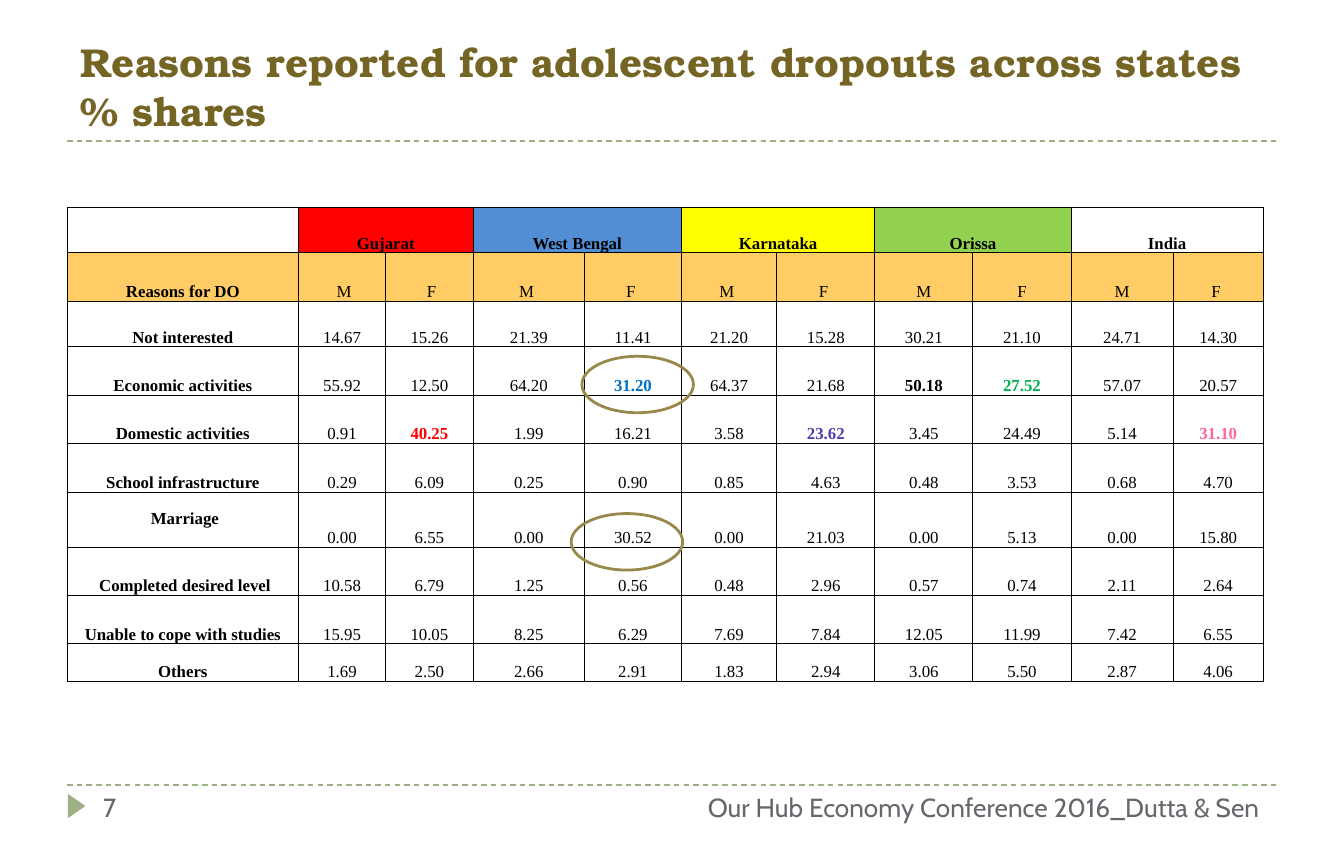
import dataclasses

import lxml.etree
import pptx
import pptx.dml.color
import pptx.enum.dml
import pptx.enum.shapes
import pptx.enum.text
import pptx.oxml.ns
import pptx.util

Inches = pptx.util.Inches
Pt = pptx.util.Pt
Align = pptx.enum.text.PP_ALIGN
Anchor = pptx.enum.text.MSO_ANCHOR
Shape = pptx.enum.shapes.MSO_SHAPE
qn = pptx.oxml.ns.qn


@dataclasses.dataclass(frozen=True)
class Theme:
    title: str = "756525"
    rule: str = "9CB084"
    ring: str = "98894B"
    foot: str = "69676D"
    ink: str = "000000"
    paper: str = "FFFFFF"
    band: str = "FFCC66"
    title_font: str = "TeX Gyre Bonum"
    table_font: str = "Times New Roman"
    foot_font: str = "Cabin"
    title_size: float = 21.6
    table_size: float = 9
    foot_size: float = 14


STATES = [("Gujarat", "FF0000"), ("West Bengal", "538ED5"), ("Karnataka", "FFFF00"),
          ("Orissa", "92D050"), ("India", Theme.paper)]
SEXES = ["Reasons for DO", " M", " F", "M ", "F ", "M ", "F ", "M", "F", "M", "F "]
REASONS = [
    ("Not interested", "14.67 15.26 21.39 11.41 21.20 15.28 30.21 21.10 24.71 14.30"),
    ("Economic activities", "55.92 12.50 64.20 31.20 64.37 21.68 50.18 27.52 57.07 20.57"),
    ("Domestic activities", "0.91 40.25 1.99 16.21 3.58 23.62 3.45 24.49 5.14 31.10"),
    ("School infrastructure", "0.29 6.09 0.25 0.90 0.85 4.63 0.48 3.53 0.68 4.70"),
    (" Marriage", "0.00 6.55 0.00 30.52 0.00 21.03 0.00 5.13 0.00 15.80"),
    (" Completed desired level", "10.58 6.79 1.25 0.56 0.48 2.96 0.57 0.74 2.11 2.64"),
    ("Unable to cope with studies", "15.95 10.05 8.25 6.29 7.69 7.84 12.05 11.99 7.42 6.55"),
    ("Others", "1.69 2.50 2.66 2.91 1.83 2.94 3.06 5.50 2.87 4.06"),
]
# Bold figures by (row, column) of the table
MARKS = {(3, 4): "0070C0", (3, 7): Theme.ink, (3, 8): "00B050",
         (4, 2): "FF0000", (4, 6): "533EA9", (4, 10): "FF6699"}
COLS = [1.72, 0.65, 0.65, 0.83, 0.72, 0.71, 0.73, 0.73, 0.73, 0.76, 0.67]
ROWS = [0.34, 0.36, 0.34, 0.36, 0.36, 0.36, 0.41, 0.36, 0.36, 0.28]


def tint(code):
    return pptx.dml.color.RGBColor.from_string(code)


def write(frame, text, font, size, color, bold=False, align=Align.LEFT):
    para = frame.paragraphs[0]
    para.alignment = align
    run = para.add_run()
    run.text = text
    run.font.name = font
    run.font.size = Pt(size)
    run.font.bold = bold
    run.font.color.rgb = tint(color)


def edge(cell, color, width):
    """Draw all four borders; call before the cell is filled."""
    props = cell._tc.get_or_add_tcPr()
    for side in ("a:lnL", "a:lnR", "a:lnT", "a:lnB"):
        line = lxml.etree.SubElement(props, qn(side), w=str(Pt(width)))
        fill = lxml.etree.SubElement(line, qn("a:solidFill"))
        lxml.etree.SubElement(fill, qn("a:srgbClr"), val=color)


class Board:
    """Holds the theme and the slide being built."""

    def __init__(self, slide, theme):
        self.slide = slide
        self.theme = theme

    def title(self, text, left, top, width, height):
        box = self.slide.shapes.title
        box.left, box.top = Inches(left), Inches(top)
        box.width, box.height = Inches(width), Inches(height)
        frame = box.text_frame
        frame.word_wrap = True
        frame.auto_size = pptx.enum.text.MSO_AUTO_SIZE.NONE
        frame.vertical_anchor = Anchor.BOTTOM
        write(frame, text, self.theme.title_font, self.theme.title_size,
              self.theme.title, bold=True)

    def rule(self, left, right, top):
        line = self.slide.shapes.add_connector(
            pptx.enum.shapes.MSO_CONNECTOR.STRAIGHT,
            Inches(left), Inches(top), Inches(right), Inches(top))
        line.line.color.rgb = tint(self.theme.rule)
        line.line.width = Pt(0.75)
        line.line.dash_style = pptx.enum.dml.MSO_LINE.DASH
        lxml.etree.SubElement(line._element.spPr, qn("a:effectLst"))

    def arrow(self, left, top, width, height):
        mark = self.slide.shapes.add_shape(
            Shape.ISOSCELES_TRIANGLE, Inches(left), Inches(top), Inches(width), Inches(height))
        mark.rotation = 90
        mark.shadow.inherit = False
        mark.fill.solid()
        mark.fill.fore_color.rgb = tint(self.theme.rule)
        mark.line.fill.background()

    def ring(self, left, top):
        oval = self.slide.shapes.add_shape(
            Shape.OVAL, Inches(left), Inches(top), Inches(0.83), Inches(0.42))
        oval.shadow.inherit = False
        oval.fill.background()
        oval.line.color.rgb = tint(self.theme.ring)
        oval.line.width = Pt(1.5)

    def foot(self, text, left, width, align=Align.LEFT):
        box = self.slide.shapes.add_textbox(
            Inches(left), Inches(5.84), Inches(width), Inches(0.34))
        box.text_frame.word_wrap = True
        write(box.text_frame, text, self.theme.foot_font, self.theme.foot_size,
              self.theme.foot, align=align)

    def cell(self, cell, text, fill, color, bold):
        cell.margin_left = cell.margin_right = cell.margin_top = Inches(0.01)
        cell.margin_bottom = 0
        cell.vertical_anchor = Anchor.BOTTOM
        edge(cell, self.theme.ink, 0.5)
        cell.fill.solid()
        cell.fill.fore_color.rgb = tint(fill)
        if text:
            write(cell.text_frame, text, self.theme.table_font, self.theme.table_size,
                  color, bold=bold, align=Align.CENTER)

    def table(self, left, top):
        theme = self.theme
        grid = self.slide.shapes.add_table(
            len(ROWS), len(COLS), Inches(left), Inches(top),
            Inches(sum(COLS)), Inches(sum(ROWS))).table
        grid.first_row = grid.horz_banding = False
        for col, width in zip(grid.columns, COLS):
            col.width = Inches(width)
        for row, height in zip(grid.rows, ROWS):
            row.height = Inches(height)

        heads, fills = [""], [theme.paper]
        for state, fill in STATES:
            heads += [state, ""]
            fills += [fill, fill]
        lines = [heads, SEXES] + [[name] + shares.split(" ") for name, shares in REASONS]
        for r, line in enumerate(lines):
            for c, text in enumerate(line):
                fill = fills[c] if r == 0 else theme.band if r == 1 else theme.paper
                bold = r == 0 or c == 0 or (r, c) in MARKS
                self.cell(grid.cell(r, c), text, fill, MARKS.get((r, c), theme.ink), bold)
        for c in range(1, len(COLS), 2):
            grid.cell(0, c).merge(grid.cell(0, c + 1))
        # The Marriage label sits one line above its figures
        grid.cell(6, 0).margin_bottom = Inches(0.14)


def main():
    deck = pptx.Presentation()
    deck.slide_width, deck.slide_height = Inches(10), Inches(6.3)
    board = Board(deck.slides.add_slide(deck.slide_layouts[5]), Theme())
    for top in (5.84, 1.05):
        board.rule(0.5, 9.5, top)
    board.arrow(0.48, 5.93, 0.18, 0.13)
    board.title("Reasons reported for adolescent dropouts across states % shares",
                0.5, 0.21, 9, 0.84)
    board.table(0.5, 1.54)
    board.ring(4.25, 3.82)
    board.ring(4.33, 2.65)
    board.foot("7", 0.67, 2.17)
    board.foot("Our Hub Economy Conference 2016_Dutta & Sen", 3.17, 6.3, Align.RIGHT)
    deck.save("out.pptx")


if __name__ == "__main__":
    main()
